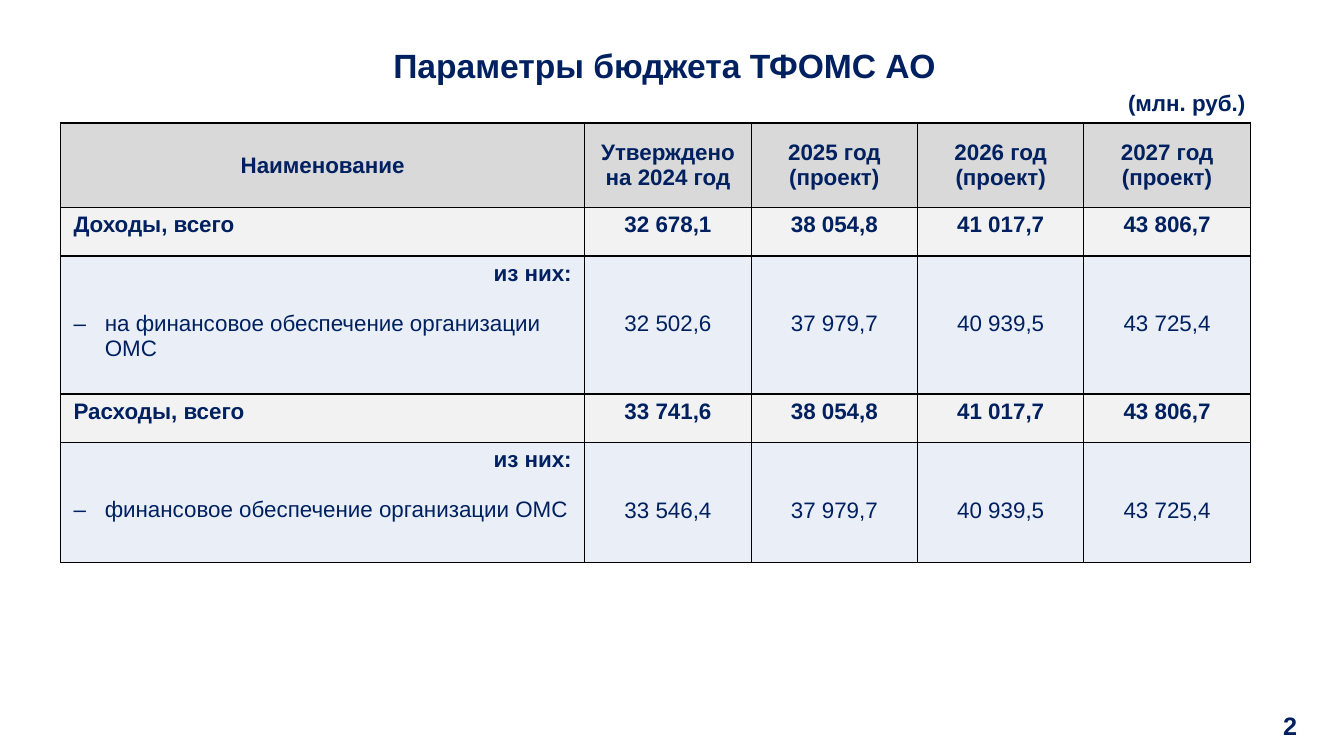
from dataclasses import dataclass

from lxml.etree import SubElement
from pptx import Presentation
from pptx.dml.color import RGBColor
from pptx.enum.text import MSO_ANCHOR as Anchor, PP_ALIGN as Align
from pptx.oxml.ns import qn
from pptx.util import Inches, Pt


@dataclass(frozen=True)
class Theme:
    font: str = "Arial"
    ink: str = "002060"
    border: str = "000000"
    header_fill: str = "D9D9D9"
    total_fill: str = "F2F2F2"
    detail_fill: str = "EAEFF7"
    title_size: int = 24
    body_size: int = 16
    number_size: int = 18


THEME = Theme()
COLUMN_WIDTHS = [5.2] + [1.65] * 4
ROW_HEIGHTS = [0.84, 0.48, 1.37, 0.48, 1.19]
HEADERS = [
    ["Наименование"],
    ["Утверждено", "на 2024 год"],
    ["2025 год", "(проект)"],
    ["2026 год (проект)"],
    ["2027 год (проект)"],
]
SECTIONS = [
    ("Доходы, всего", ["32 678,1", "38 054,8", "41 017,7", "43 806,7"],
     "на финансовое обеспечение организации ОМС",
     ["32 502,6", "37 979,7", "40 939,5", "43 725,4"]),
    ("Расходы, всего", ["33 741,6", "38 054,8", "41 017,7", "43 806,7"],
     "финансовое обеспечение организации ОМС",
     ["33 546,4", "37 979,7", "40 939,5", "43 725,4"]),
]


def write(paragraph, text, align=Align.CENTER, size=THEME.body_size, bold=True):
    paragraph.alignment = align
    run = paragraph.add_run()
    run.text = text
    run.font.name = THEME.font
    run.font.size = Pt(size)
    run.font.bold = bold
    run.font.color.rgb = RGBColor.from_string(THEME.ink)


def add_dash(paragraph):
    properties = paragraph._p.get_or_add_pPr()
    properties.set("marL", str(Inches(0.31)))
    properties.set("indent", str(Inches(-0.31)))
    SubElement(properties, qn("a:buFont"), typeface=THEME.font)
    SubElement(properties, qn("a:buChar"), char="–")


def add_borders(cell):
    properties = cell._tc.get_or_add_tcPr()
    for position, side in enumerate(("lnL", "lnR", "lnT", "lnB")):
        line = properties.makeelement(qn(f"a:{side}"), {"w": str(Pt(1))})
        fill = SubElement(line, qn("a:solidFill"))
        SubElement(fill, qn("a:srgbClr"), val=THEME.border)
        properties.insert(position, line)


def style_cell(cell, fill, side=0.13, top=0.05, anchor=Anchor.TOP):
    cell.fill.solid()
    cell.fill.fore_color.rgb = RGBColor.from_string(fill)
    cell.margin_left = cell.margin_right = Inches(side)
    cell.margin_top, cell.margin_bottom = Inches(top), Inches(0.05)
    cell.vertical_anchor = anchor
    add_borders(cell)


def fill_header(cells):
    for column, (cell, lines) in enumerate(zip(cells, HEADERS)):
        side = 0.05 if column in (1, 2, 3) else 0.13
        style_cell(cell, THEME.header_fill, side, anchor=Anchor.MIDDLE)
        frame = cell.text_frame
        for index, line in enumerate(lines):
            write(frame.add_paragraph() if index else frame.paragraphs[0], line)


def fill_values(cells, values, fill, top, bold):
    for cell, value in zip(cells, values):
        style_cell(cell, fill, top=top)
        write(cell.text_frame.paragraphs[0], value, bold=bold)


def fill_total(cells, name, values):
    style_cell(cells[0], THEME.total_fill)
    write(cells[0].text_frame.paragraphs[0], name, Align.LEFT)
    fill_values(cells[1:], values, THEME.total_fill, 0.05, True)


def fill_detail(cells, name, values):
    style_cell(cells[0], THEME.detail_fill)
    frame = cells[0].text_frame
    write(frame.paragraphs[0], "из них:", Align.RIGHT)
    item = frame.add_paragraph()
    item.space_before, item.space_after = Pt(18), Pt(6)
    add_dash(item)
    write(item, name, Align.LEFT, bold=False)
    fill_values(cells[1:], values, THEME.detail_fill, 0.55, False)


def add_budget_table(slide, left, top):
    frame = slide.shapes.add_table(
        len(ROW_HEIGHTS), len(COLUMN_WIDTHS), Inches(left), Inches(top),
        Inches(sum(COLUMN_WIDTHS)), Inches(sum(ROW_HEIGHTS)))
    table = frame.table
    table.horz_banding = False
    for column, width in zip(table.columns, COLUMN_WIDTHS):
        column.width = Inches(width)
    for row, height in zip(table.rows, ROW_HEIGHTS):
        row.height = Inches(height)
    rows = [list(row.cells) for row in table.rows]
    fill_header(rows[0])
    for index, (total, totals, detail, details) in enumerate(SECTIONS):
        fill_total(rows[2 * index + 1], total, totals)
        fill_detail(rows[2 * index + 2], detail, details)


def add_title(slide, left, top, width, height):
    title = slide.shapes.title
    title.left, title.top = Inches(left), Inches(top)
    title.width, title.height = Inches(width), Inches(height)
    frame = title.text_frame
    frame.word_wrap = True
    frame.vertical_anchor = Anchor.TOP
    frame.margin_top = Inches(0.09)
    frame.margin_bottom = 0
    write(frame.paragraphs[0], "Параметры бюджета ТФОМС АО", size=THEME.title_size)


def add_label(slide, left, top, width, height, text, align, size):
    box = slide.shapes.add_textbox(*map(Inches, (left, top, width, height)))
    box.text_frame.word_wrap = True
    write(box.text_frame.paragraphs[0], text, align, size)


def build_budget_slide(presentation):
    slide = presentation.slides.add_slide(presentation.slide_layouts[5])
    add_title(slide, 0.45, 0.36, 12.28, 0.39)
    add_budget_table(slide, 0.6, 1.22)
    add_label(slide, 10.37, 0.84, 2.08, 0.37, "(млн. руб.)", Align.RIGHT, THEME.body_size)
    add_label(slide, 12.34, 7, 0.91, 0.5, "2", Align.CENTER, THEME.number_size)


def main():
    presentation = Presentation()
    presentation.slide_width = Inches(13.33)
    presentation.slide_height = Inches(7.5)
    build_budget_slide(presentation)
    presentation.save("out.pptx")


if __name__ == "__main__":
    main()
